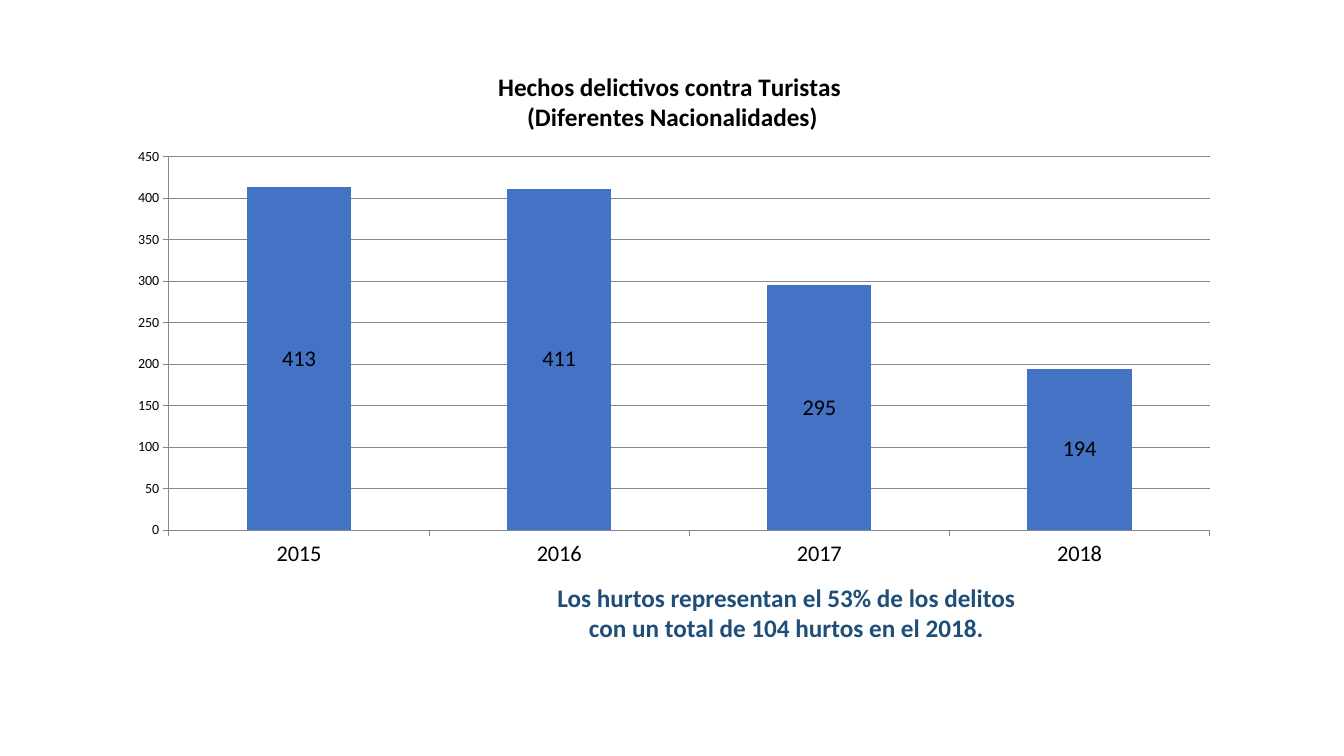
from lxml import etree
from pptx import Presentation
from pptx import util as u
from pptx.chart.data import CategoryChartData
from pptx.dml.color import RGBColor
from pptx.enum import chart as ch
from pptx.enum import text
from pptx.oxml.ns import qn

FONT = "Calibri"
BLACK, NAVY, BLUE, GRAY = "000000", "1F4E79", "4472C4", "878787"
CRIMES = {"2015": 413, "2016": 411, "2017": 295, "2018": 194}


def color(hex_value):
    return RGBColor.from_string(hex_value)


def style_font(font, size, fill=BLACK, bold=False):
    font.name = FONT
    font.size = u.Pt(size)
    font.bold = bold
    font.color.rgb = color(fill)


def write_text(para, content, **style):
    """Fill a centred paragraph; a vertical tab in content breaks the line."""
    para.alignment = text.PP_ALIGN.CENTER
    for index, line in enumerate(content.split("\v")):
        if index:
            para.add_line_break()
        span = para.add_run()
        span.text = line
        style_font(span.font, **style)


def add_note(page, left, top, width, height, content, **style):
    box = page.shapes.add_textbox(*map(u.Inches, (left, top, width, height)))
    frame = box.text_frame
    frame.word_wrap = True
    frame.auto_size = text.MSO_AUTO_SIZE.SHAPE_TO_FIT_TEXT
    write_text(frame.paragraphs[0], content, **style)


def style_axis(axis, size):
    axis.major_tick_mark = ch.XL_TICK_MARK.OUTSIDE
    axis.minor_tick_mark = ch.XL_TICK_MARK.NONE
    axis.format.line.color.rgb = color(GRAY)
    axis.format.line.width = u.Pt(0.75)
    style_font(axis.tick_labels.font, size)


def place_plot(chart, **fractions):
    """Fix the inner plot area as fractions (x, y, w, h) of the chart."""
    area = chart.element.find(".//" + qn("c:plotArea"))
    for old in area.findall(qn("c:layout")):
        area.remove(old)
    layout = etree.Element(qn("c:layout"))
    area.insert(0, layout)
    manual = etree.SubElement(layout, qn("c:manualLayout"))
    settings = {"layoutTarget": "inner", "xMode": "edge", "yMode": "edge", **fractions}
    for name, value in settings.items():
        etree.SubElement(manual, qn("c:" + name)).set("val", str(value))


def add_crime_chart(page, left, top, width, height, title):
    data = CategoryChartData()
    data.categories = list(CRIMES)
    data.add_series("Series 1", list(CRIMES.values()))
    chart = page.shapes.add_chart(
        ch.XL_CHART_TYPE.COLUMN_STACKED,
        *map(u.Inches, (left, top, width, height)), data).chart
    style_font(chart.font, 10)
    chart.has_legend = False
    write_text(chart.chart_title.text_frame.paragraphs[0], title, size=18, bold=True)

    style_axis(chart.category_axis, 16)
    values = chart.value_axis
    style_axis(values, 10)
    values.minimum_scale, values.maximum_scale, values.major_unit = 0, 450, 50
    values.has_major_gridlines = True
    values.major_gridlines.format.line.color.rgb = color(GRAY)
    values.major_gridlines.format.line.width = u.Pt(0.75)

    plot = chart.plots[0]
    plot.gap_width, plot.overlap = 150, 100
    plot.vary_by_categories = False
    bars = plot.series[0]
    bars.format.fill.solid()
    bars.format.fill.fore_color.rgb = color(BLUE)
    labels = bars.data_labels
    labels.show_value = True
    labels.position = ch.XL_LABEL_POSITION.CENTER
    style_font(labels.font, 16)
    place_plot(chart, x=0.05, y=0.2, w=0.93, h=0.71)


def main():
    deck = Presentation()
    deck.slide_width, deck.slide_height = u.Inches(13.33), u.Inches(7.5)
    page = deck.slides.add_slide(deck.slide_layouts[6])
    add_note(page, 3.1, 5.73, 9.4, 0.71,
             "Los hurtos representan el 53% de los delitos\v"
             "con un total de 104 hurtos en el 2018.",
             size=18, fill=NAVY, bold=True)
    add_crime_chart(page, 1.12, 0.51, 11.1, 5.22,
                    "Hechos delictivos contra Turistas \v(Diferentes Nacionalidades)")
    deck.save("out.pptx")


if __name__ == "__main__":
    main()
